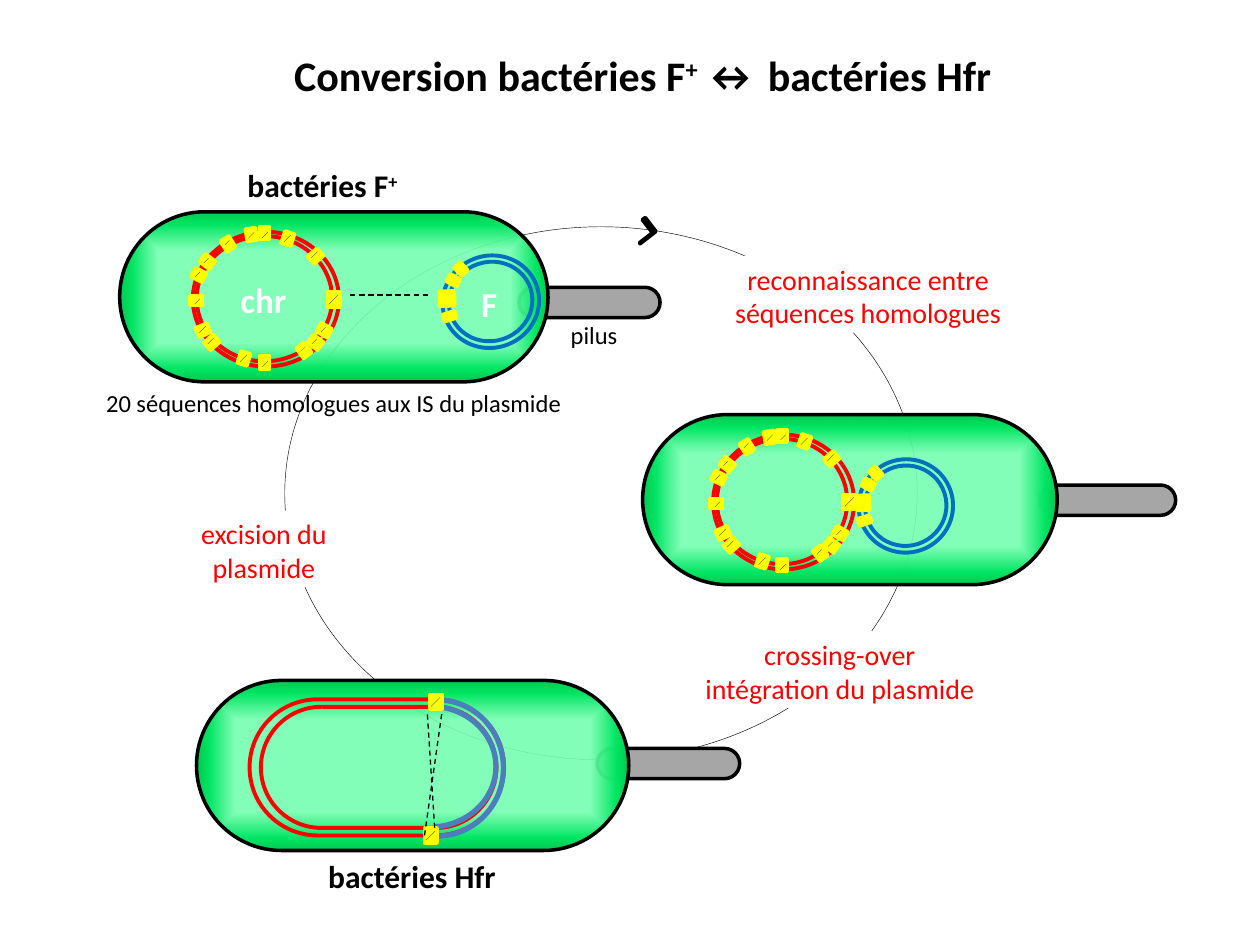
from collections import namedtuple

from lxml import etree
from pptx import Presentation
from pptx.dml.color import RGBColor
from pptx.enum.dml import MSO_LINE, MSO_PATTERN
from pptx.enum.shapes import MSO_CONNECTOR, MSO_SHAPE as Kind
from pptx.enum.text import MSO_ANCHOR, MSO_AUTO_SIZE, PP_ALIGN
from pptx.oxml import parse_xml
from pptx.oxml.ns import nsdecls, qn
from pptx.util import Pt

BLACK = RGBColor(0x00, 0x00, 0x00)
WHITE = RGBColor(0xFF, 0xFF, 0xFF)
RED = RGBColor(0xFF, 0x00, 0x00)
BLUE = RGBColor(0x00, 0x70, 0xC0)
ARC_BLUE = RGBColor(0x4B, 0x7E, 0xBC)
YELLOW = RGBColor(0xFF, 0xFF, 0x00)
GREY = RGBColor(0xA6, 0xA6, 0xA6)
LIGHT_GREEN = RGBColor(0x77, 0xFF, 0xB2)
MID_GREEN = RGBColor(0x00, 0xE6, 0x63)
DARK_GREEN = RGBColor(0x00, 0xD0, 0x54)

Box = namedtuple("Box", "left top width height")

CHROMOSOME_SITES = [
    (0.35, 0.94, 17.9), (0.49, 0.97, 0), (0.76, 0.88, 323.6), (0.49, 0.01, 0),
    (0.65, 0.05, 17.9), (0.1, 0.22, 307.1), (0.9, 0.73, 300.3), (0.04, 0.32, 297.4),
    (0.24, 0.09, 328.1), (0.84, 0.82, 307.1), (0.13, 0.82, 48.3), (0.84, 0.18, 48.3),
    (0.07, 0.73, 65.3), (0.4, 0.02, 350.8), (0.02, 0.51, 270),
]
PLASMID_SITES = [
    (-23.6, 8.3, 4.3, 7.2, 252.1), (-25, -1.8, 8.6, 8.6, 268),
    (-21.4, -12.2, 5, 6.5, 299.2), (-17.1, -18.7, 5, 6.5, 318.4),
]


def add_figure(shapes, kind, box, line, weight, fill=None, rotation=0, adjust=()):
    """Add an outlined preset shape, unfilled unless a colour is given."""
    figure = shapes.add_shape(kind, *map(Pt, box))
    figure.shadow.inherit = False
    figure.rotation = rotation
    for index, value in enumerate(adjust):
        figure.adjustments[index] = value
    figure.line.color.rgb = line
    figure.line.width = Pt(weight)
    if fill is None:
        figure.fill.background()
    else:
        figure.fill.solid()
        figure.fill.fore_color.rgb = fill
    return figure


def add_site(shapes, x, y, width=5.8, height=7.2, rotation=0, dotted=True):
    """Centre a yellow insertion sequence on a point."""
    box = Box(x - width / 2, y - height / 2, width, height)
    site = add_figure(shapes, Kind.RECTANGLE, box, YELLOW, 2, YELLOW, rotation)
    if dotted:
        site.fill.patterned()
        site.fill.pattern = MSO_PATTERN.PERCENT_10
        site.fill.fore_color.rgb = BLACK
        site.fill.back_color.rgb = YELLOW


def add_dashes(shapes, *ends):
    """Draw a thin dashed line between two points."""
    dashes = shapes.add_connector(MSO_CONNECTOR.STRAIGHT, *map(Pt, ends))
    dashes.line.color.rgb = BLACK
    dashes.line.width = Pt(0.75)
    dashes.line.dash_style = MSO_LINE.DASH
    etree.SubElement(dashes._element.spPr, qn("a:effectLst"))


def shade_cell(body):
    """Give a cell body its green gradient, lightest in the middle."""
    stops = [(54, LIGHT_GREEN, 90), (85, MID_GREEN, 100), (96, DARK_GREEN, 100)]
    stop_list = "".join(
        f'<a:gs pos="{place * 1000}"><a:srgbClr val="{colour}">'
        f'<a:alpha val="{alpha * 1000}"/></a:srgbClr></a:gs>'
        for place, colour, alpha in stops
    )
    gradient = parse_xml(
        f'<a:gradFill {nsdecls("a")} rotWithShape="1"><a:gsLst>{stop_list}</a:gsLst>'
        '<a:path path="shape"><a:fillToRect l="50000" t="50000" r="50000" b="50000"/>'
        "</a:path></a:gradFill>"
    )
    properties = body._element.spPr
    properties.replace(properties.find(qn("a:noFill")), gradient)


def add_cell(page, box, pilus_overlap, pilus_drop, pilus_length):
    """Group a bacterium with its pilus and return the group's shapes."""
    shapes = page.shapes.add_group_shape().shapes
    pilus = Box(box.left + box.width - pilus_overlap, box.top + pilus_drop, pilus_length, 17.3)
    add_figure(shapes, Kind.ROUNDED_RECTANGLE, pilus, BLACK, 2, GREY, adjust=[0.5])
    shade_cell(add_figure(shapes, Kind.ROUNDED_RECTANGLE, box, BLACK, 2, adjust=[0.5]))
    return shapes


def add_chromosome(shapes, box):
    """Draw the red double ring and its homologous sequences."""
    inner = Box(box.left + 2.2, box.top + 2.4, box.width - 6.1, box.height - 5.4)
    for ring in (inner, box):
        add_figure(shapes, Kind.OVAL, ring, RED, 2.25)
    for across, down, turn in CHROMOSOME_SITES:
        add_site(shapes, box.left + across * box.width, box.top + down * box.height, rotation=turn)
    add_site(shapes, box.left + 0.965 * box.width, box.top + box.height / 2, 8.6, rotation=270)


def add_plasmid(shapes, box):
    """Draw the blue double ring and its insertion sequences."""
    inner = Box(box.left + 3.6, box.top + 3.6, box.width - 7.4, box.height - 7.4)
    for ring in (box, inner):
        add_figure(shapes, Kind.OVAL, ring, BLUE, 2.25, rotation=252.1)
    x, y = box.left + box.width / 2, box.top + box.height / 2
    for right, down, width, height, turn in PLASMID_SITES:
        add_site(shapes, x + right, y + down, width, height, turn, dotted=False)


def add_hfr_genome(shapes, box):
    """Draw the chromosome with the plasmid integrated at its right end."""
    left, top, width, height = box
    inner = Box(left + 6.5, top + 4.3, width - 10.8, height - 8.6)
    for outline in (box, inner):
        add_figure(shapes, Kind.ROUNDED_RECTANGLE, outline, RED, 2.25, adjust=[0.5])
    for drop, arc_width, end in ((0.7, 69.1, 213.036), (1.4, 77.8, 0)):
        arc = Box(left + 68.4, top + drop, arc_width, 75.6)
        add_figure(shapes, Kind.ARC, arc, ARC_BLUE, 3, rotation=90, adjust=[107.657, end])
    for right, down in ((103.6, 77.8), (106.5, 1.4)):
        add_site(shapes, left + right, top + down, 8.6, rotation=270)
    for x1, y1, x2, y2 in ((105.8, 73.4, 101.5, 6.5), (100, 77.8, 110.1, 6.5)):
        add_dashes(shapes, left + x1, top + y1, left + x2, top + y2)


def write_text(frame, lines, size, colour, bold=False, align=PP_ALIGN.CENTER):
    """Fill a frame; a line is a list of spans, every second one raised."""
    for index, spans in enumerate(lines):
        para = frame.paragraphs[0] if index == 0 else frame.add_paragraph()
        para.alignment = align
        for place, text in enumerate(spans):
            span = para.add_run()
            span.text = text
            span.font.name = "Calibri"
            span.font.size = Pt(size)
            span.font.bold = bold
            span.font.color.rgb = colour
            if place % 2:
                span._r.get_or_add_rPr().set("baseline", "30000")


def add_label(page, box, lines, size, colour, bold=False, align=PP_ALIGN.CENTER, fill=None):
    """Place a label, wrapped on a filled box or on a single clear line."""
    label = page.shapes.add_textbox(*map(Pt, box))
    label.text_frame.word_wrap = fill is not None
    label.text_frame.auto_size = MSO_AUTO_SIZE.SHAPE_TO_FIT_TEXT
    if fill is not None:
        label.fill.solid()
        label.fill.fore_color.rgb = fill
    write_text(label.text_frame, lines, size, colour, bold, align)


def add_title(page, box):
    """Move and format the title placeholder."""
    title = page.shapes.title
    title.left, title.top, title.width, title.height = map(Pt, box)
    title.text_frame.vertical_anchor = MSO_ANCHOR.TOP
    title.text_frame.auto_size = MSO_AUTO_SIZE.SHAPE_TO_FIT_TEXT
    write_text(title.text_frame, [["Conversion bactéries F", "+ ", "↔ bactéries Hfr"]], 24, BLACK, True)


def add_labels(page):
    """Write the names of the parts and the three steps of the cycle."""
    left = PP_ALIGN.LEFT
    add_label(page, Box(267.8, 157.7, 25.2, 27.4), [["F"]], 20, WHITE, True, left)
    add_label(page, Box(130.3, 155.5, 41, 31.7), [["chr"]], 20, WHITE, True, left)
    add_label(page, Box(131, 91.4, 106.6, 28.1), [["bactéries F", "+"]], 18, BLACK, True)
    add_label(page, Box(172.8, 486, 125.3, 28.1), [["bactéries Hfr"]], 18, BLACK, True)
    add_label(page, Box(319, 179.3, 44.6, 24.5), [["pilus"]], 14, BLACK, align=left)
    homologous = [["20 séquences homologues aux IS du plasmide"]]
    add_label(page, Box(53.3, 218.2, 275, 24.5), homologous, 14, BLACK)
    steps = [
        (Box(395.3, 146.2, 201.6, 43.9), [["reconnaissance entre séquences homologues"]]),
        (Box(385.9, 360.7, 187.9, 43.9), [["crossing-over"], ["intégration du plasmide"]]),
        (Box(90.7, 291.6, 120.2, 43.9), [["excision du plasmide"]]),
    ]
    for box, lines in steps:
        add_label(page, box, lines, 16, RED, fill=WHITE)


def main():
    """Build the slide and save it."""
    deck = Presentation()
    deck.slide_width, deck.slide_height = Pt(720), Pt(540)
    page = deck.slides.add_slide(deck.slide_layouts[5])
    add_title(page, Box(155.5, 24.5, 423.4, 36))
    add_figure(page.shapes, Kind.OVAL, Box(162.7, 129.6, 361.4, 304.6), BLACK, 0.25)

    pairing = add_cell(page, Box(367.2, 236.9, 236.9, 97.2), 10.1, 40.3, 77.8)
    add_plasmid(pairing, Box(491, 262.1, 53.3, 54))
    add_chromosome(pairing, Box(407.5, 248.4, 80.6, 77))
    hfr = add_cell(page, Box(112.3, 388.8, 247, 97.2), 18, 38.9, 81.4)
    add_hfr_genome(hfr, Box(142.6, 399.6, 145.4, 77.8))
    donor = add_cell(page, Box(68.4, 121, 244.8, 97.2), 16.6, 43.2, 80.6)
    add_chromosome(donor, Box(110.2, 132.5, 83.5, 77))
    add_plasmid(donor, Box(254.2, 144.7, 52.6, 55.4))
    add_dashes(page.shapes, 200.2, 168.5, 244.8, 168.5)

    add_labels(page)
    arrowhead = Box(362.2, 126, 10.1, 11.5)
    add_figure(page.shapes, Kind.CORNER, arrowhead, BLACK, 2, BLACK, 232.4, [0.213, 0.073])
    deck.save("out.pptx")


if __name__ == "__main__":
    main()
